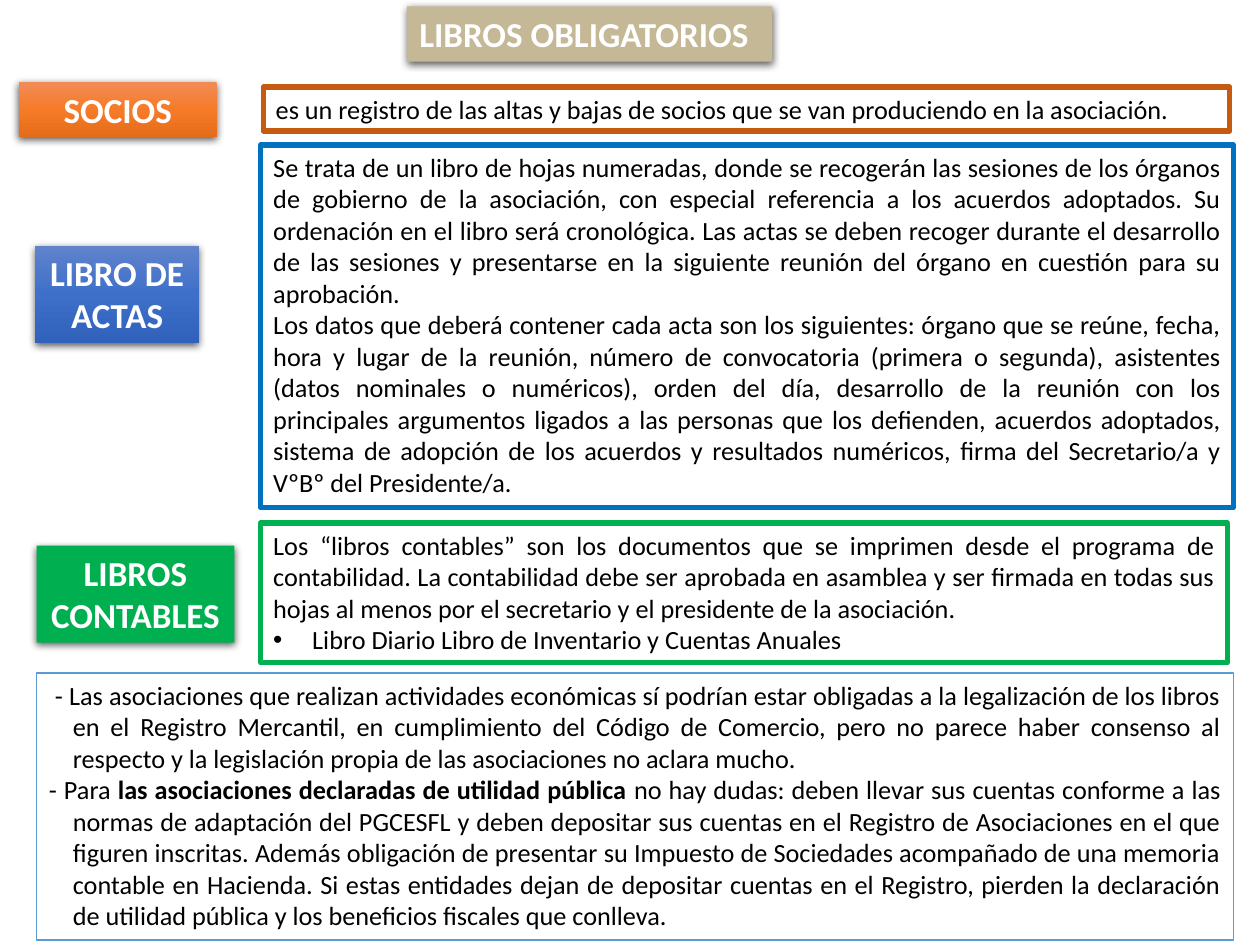
from pptx import Presentation
from pptx.dml.color import RGBColor
from pptx.enum.text import MSO_AUTO_SIZE, PP_ALIGN
from pptx.oxml import parse_xml
from pptx.oxml.ns import nsdecls, qn
from pptx.util import Inches, Pt

FONT = "Calibri"
BLACK, WHITE = "000000", "FFFFFF"

# Headings: text, (left, top, width, height), fill colour or gradient colours, alignment
HEADINGS = [
    ("LIBROS OBLIGATORIOS", (3.23, 0.05, 2.9, 0.44), "C4B896", PP_ALIGN.LEFT),
    ("SOCIOS", (0.15, 0.65, 1.57, 0.44), ("F18C57", "F67B28", "E56C19"), PP_ALIGN.CENTER),
    ("LIBRO DE ACTAS", (0.28, 1.95, 1.3, 0.77), ("6183CB", "3E70CA", "3062BB"), PP_ALIGN.CENTER),
    ("LIBROS CONTABLES", (0.29, 4.33, 1.57, 0.77), "00B050", PP_ALIGN.CENTER),
]

# Descriptions: (left, top, width, height), line colour, line width, paragraphs
# Paragraph: hanging indent, bullet, [(text, bold), ...]
DESCRIPTIONS = [
    ((2.09, 0.69, 7.67, 0.35), "C55A11", 3, [
        (0, None, [("es un registro de las altas y bajas de socios que se van produciendo en la "
                    "asociación.", False)]),
    ]),
    ((2.07, 1.15, 7.72, 2.88), "0070C0", 3, [
        (0, None, [("Se trata de un libro de hojas numeradas, donde se recogerán las sesiones de "
                    "los órganos de gobierno de la asociación, con especial referencia a los "
                    "acuerdos adoptados. Su ordenación en el libro será cronológica. Las actas se "
                    "deben recoger durante el desarrollo de las sesiones y presentarse en la "
                    "siguiente reunión del órgano en cuestión para su aprobación. ", False)]),
        (0, None, [("Los datos que deberá contener cada acta son los siguientes: órgano que se "
                    "reúne, fecha, hora y lugar de la reunión, número de convocatoria (primera o "
                    "segunda), asistentes (datos nominales o numéricos), orden del día, desarrollo "
                    "de la reunión con los principales argumentos ligados a las personas que los "
                    "defienden, acuerdos adoptados, sistema de adopción de los acuerdos y "
                    "resultados numéricos, firma del Secretario/a y VºBº del Presidente/a. ",
                    False)]),
    ]),
    ((2.07, 4.15, 7.67, 1.11), "00B050", 3, [
        (0, None, [("Los “libros contables” son los documentos que se imprimen desde el programa "
                    "de contabilidad. La contabilidad debe ser aprobada en asamblea y ser firmada "
                    "en todas sus hojas al menos por el secretario y el presidente de la "
                    "asociación. ", False)]),
        (0.31, "•", [("Libro Diario Libro de Inventario y Cuentas Anuales", False)]),
    ]),
    ((0.29, 5.34, 9.5, 2.12), "5B9BD5", 0.75, [
        (0.19, None, [(" - Las asociaciones que realizan actividades económicas sí podrían estar "
                       "obligadas a la legalización de los libros en el Registro Mercantil, en "
                       "cumplimiento del Código de Comercio, pero no parece haber consenso al "
                       "respecto y la legislación propia de las asociaciones no aclara mucho.",
                       False)]),
        (0.19, None, [("- Para ", False),
                      ("las asociaciones declaradas de utilidad pública ", True),
                      ("no hay dudas: deben llevar sus cuentas conforme a las normas de adaptación "
                       "del PGCESFL y deben depositar sus cuentas en el Registro de Asociaciones "
                       "en el que figuren inscritas. Además obligación de presentar su Impuesto de "
                       "Sociedades acompañado de una memoria contable en Hacienda. Si estas "
                       "entidades dejan de depositar cuentas en el Registro, pierden la "
                       "declaración de utilidad pública y los beneficios fiscales que conlleva.",
                       False)]),
    ]),
]


def color(value):
    return RGBColor.from_string(value)


def add_box(page, place):
    box = page.shapes.add_textbox(*map(Inches, place))
    box.text_frame.word_wrap = True
    box.text_frame.auto_size = MSO_AUTO_SIZE.SHAPE_TO_FIT_TEXT
    return box


def add_span(para, text, size, bold, text_color):
    span = para.add_run()
    span.text = text
    for name, value in {"name": FONT, "size": Pt(size), "bold": bold}.items():
        setattr(span.font, name, value)
    span.font.color.rgb = color(text_color)


def paint(box, fill):
    """Fill with one colour, or with evenly spaced colours from top to bottom."""
    if isinstance(fill, str):
        box.fill.solid()
        box.fill.fore_color.rgb = color(fill)
        return
    box.fill.gradient()
    box.fill.gradient_angle = 270
    stops = box.element.spPr.find(".//" + qn("a:gsLst"))
    for stop in list(stops):
        stops.remove(stop)
    for index, value in enumerate(fill):
        position = index * 100000 // (len(fill) - 1)
        stops.append(parse_xml(
            f'<a:gs {nsdecls("a")} pos="{position}"><a:srgbClr val="{value}"/></a:gs>'))


def add_shadow(box):
    box.shadow.inherit = False
    box.element.spPr.find(qn("a:effectLst")).append(parse_xml(
        f'<a:outerShdw {nsdecls("a")} blurRad="{Pt(4.5)}" dist="{Pt(1.5)}" dir="5400000" '
        f'algn="ctr" rotWithShape="0"><a:srgbClr val="{BLACK}"><a:alpha val="63000"/>'
        '</a:srgbClr></a:outerShdw>'))


def set_hanging(para, indent, bullet):
    properties = para._p.get_or_add_pPr()
    properties.set("marL", str(Inches(indent)))
    properties.set("indent", str(-Inches(indent)))
    if bullet:
        properties.append(parse_xml(f'<a:buFont {nsdecls("a")} typeface="Arial"/>'))
        properties.append(parse_xml(f'<a:buChar {nsdecls("a")} char="{bullet}"/>'))


deck = Presentation()
deck.slide_width, deck.slide_height = Inches(10), Inches(7.5)
page = deck.slides.add_slide(deck.slide_layouts[6])

for text, place, fill, alignment in HEADINGS:
    box = add_box(page, place)
    paint(box, fill)
    add_shadow(box)
    para = box.text_frame.paragraphs[0]
    para.alignment = alignment
    add_span(para, text, 20, True, WHITE)

for place, line_color, line_width, paragraphs in DESCRIPTIONS:
    box = add_box(page, place)
    box.line.color.rgb = color(line_color)
    box.line.width = Pt(line_width)
    frame = box.text_frame
    for index, (indent, bullet, spans) in enumerate(paragraphs):
        para = frame.add_paragraph() if index else frame.paragraphs[0]
        para.alignment = PP_ALIGN.JUSTIFY
        if indent:
            set_hanging(para, indent, bullet)
        for text, bold in spans:
            add_span(para, text, 15, bold, BLACK)

deck.save("out.pptx")
